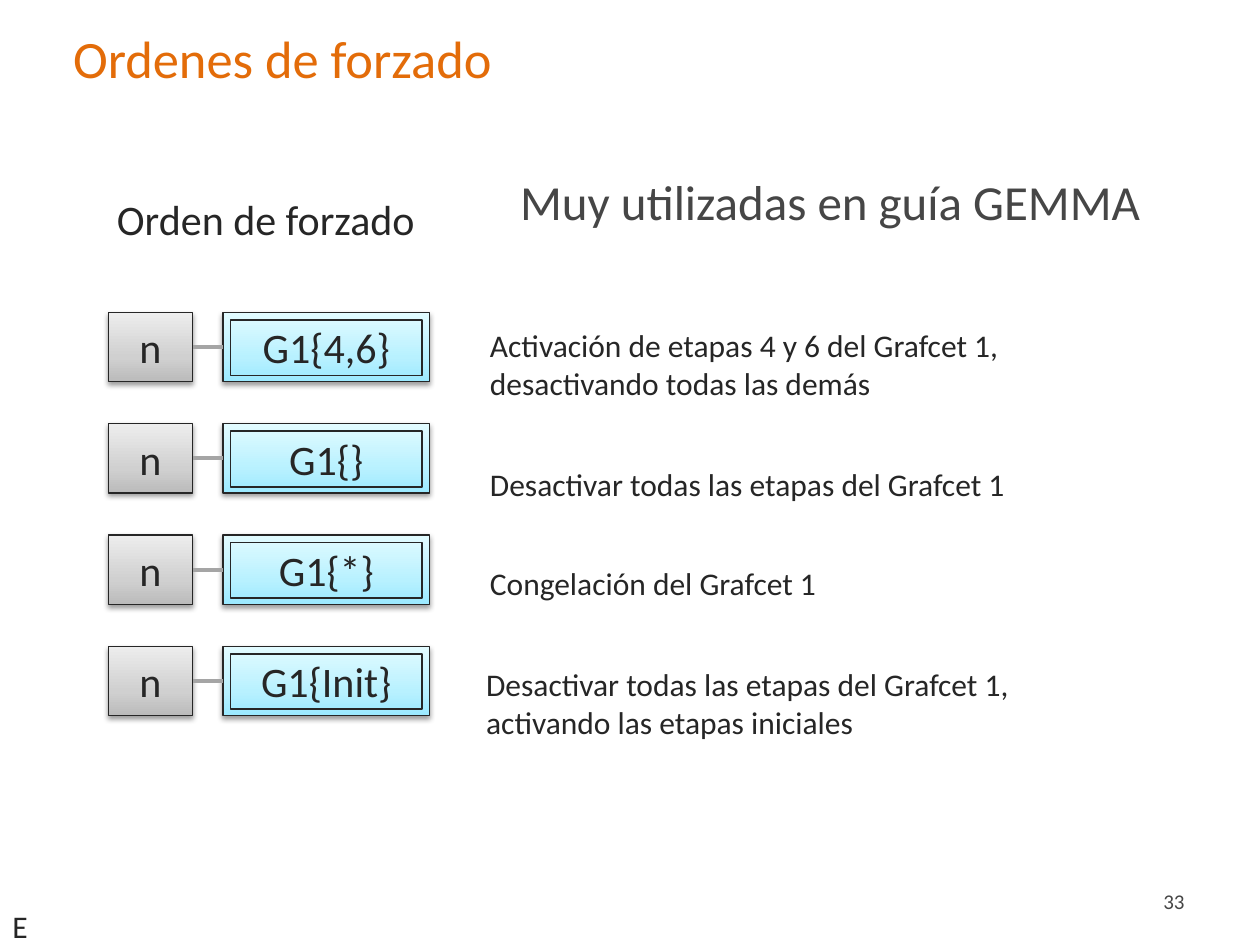
from copy import deepcopy

from lxml import etree
from pptx import Presentation
from pptx import util as u
from pptx.dml import color
from pptx.enum import shapes, text
from pptx.oxml import ns

INK = "262626"
GREY = "464646"
ORANGE = "E36C09"
STEP_STOPS = [(0, "BBBBBB"), (0.35, "D0D0D0"), (1, "EDEDED")]
ORDER_STOPS = [(0, "9BE9FF"), (0.35, "B8F1FF"), (1, "E2FBFF")]
LEFT, CENTER, RIGHT = text.PP_ALIGN.LEFT, text.PP_ALIGN.CENTER, text.PP_ALIGN.RIGHT
TOP, MIDDLE = text.MSO_ANCHOR.TOP, text.MSO_ANCHOR.MIDDLE


def rgb(value):
    """Turn a hex string into a colour."""
    return color.RGBColor.from_string(value)


class ForcingSlide:
    """Hold the style and the slide, and draw each kind of element."""

    font = "Calibri"

    def __init__(self, prs):
        """Add a title-only slide."""
        self.slide = prs.slides.add_slide(prs.slide_layouts[5])

    def set_text(self, sp, words, size, ink=INK, align=LEFT, anchor=TOP):
        """Put formatted text in a shape."""
        tf = sp.text_frame
        tf.text = words
        tf.word_wrap = True
        tf.vertical_anchor = anchor
        p = tf.paragraphs[0]
        p.alignment = align
        r = p.runs[0]
        r.font.name = self.font
        r.font.size = u.Pt(size)
        r.font.color.rgb = rgb(ink)

    def title(self, words, x, y, w, h):
        """Place and fill the title placeholder."""
        sp = self.slide.shapes.title
        sp.left, sp.top, sp.width, sp.height = map(u.Inches, (x, y, w, h))
        self.set_text(sp, words, 30, ORANGE, anchor=MIDDLE)

    def label(self, words, x, y, w, h, size=18, **style):
        """Add a text box."""
        sp = self.slide.shapes.add_textbox(*map(u.Inches, (x, y, w, h)))
        self.set_text(sp, words, size, **style)

    def frame(self, group, x, y, w, h, weight):
        """Add an unfilled, outlined rectangle to a group."""
        sp = group.shapes.add_shape(shapes.MSO_SHAPE.RECTANGLE, *map(u.Inches, (x, y, w, h)))
        sp.shadow.inherit = False
        sp.fill.background()
        sp.line.color.rgb = rgb(INK)
        sp.line.width = u.Pt(weight)
        return sp

    def box(self, group, words, x, y, w, h, stops):
        """Add a shaded rectangle with a soft shadow and centred text."""
        sp = self.frame(group, x, y, w, h, 0.75)
        sp.fill.gradient()
        sp.fill.gradient_angle = 90
        gs_list = sp._element.spPr.find(ns.qn("a:gradFill")).find(ns.qn("a:gsLst"))
        gs_list.append(deepcopy(gs_list[-1]))
        for stop, (position, value) in zip(sp.fill.gradient_stops, stops):
            stop.position = position
            stop.color.rgb = rgb(value)
        effects = sp._element.spPr.find(ns.qn("a:effectLst"))
        shadow = etree.SubElement(effects, ns.qn("a:outerShdw"), blurRad=str(u.Pt(3.1)),
                                  dist=str(u.Pt(1.6)), dir="5400000", rotWithShape="0")
        tint = etree.SubElement(shadow, ns.qn("a:srgbClr"), val="000000")
        etree.SubElement(tint, ns.qn("a:alpha"), val="38000")
        self.set_text(sp, words, 24, align=CENTER, anchor=MIDDLE)
        return sp

    def link(self, group, start, end):
        """Join the right side of one box to the left side of another."""
        line = group.shapes.add_connector(shapes.MSO_CONNECTOR.STRAIGHT, start.left + start.width,
                                          start.top + start.height // 2,
                                          end.left, end.top + end.height // 2)
        line.begin_connect(start, 3)
        line.end_connect(end, 1)
        line.line.color.rgb = rgb("A5A5A5")
        line.line.width = u.Pt(2.25)
        etree.SubElement(line._element.spPr, ns.qn("a:effectLst"))

    def order(self, words, y):
        """Draw a step joined to its double-framed forcing order."""
        group = self.slide.shapes.add_group_shape()
        step = self.box(group, "n", 0.86, y, 0.67, 0.55, STEP_STOPS)
        action = self.box(group, words, 1.77, y, 1.64, 0.55, ORDER_STOPS)
        self.frame(group, 1.83, y + 0.06, 1.52, 0.44, 1)
        self.link(group, step, action)


def main():
    """Build and save the slide."""
    prs = Presentation()
    prs.slide_width, prs.slide_height = u.Inches(10), u.Inches(7.5)
    s = ForcingSlide(prs)
    s.title("Ordenes de forzado", 0.48, 0.08, 9.19, 0.75)
    s.label("Muy utilizadas en guía GEMMA", 4.03, 1.31, 5.64, 5.25, 28, ink=GREY)
    s.label("33", 7.17, 6.95, 2.33, 0.4, 12, ink=GREY, align=RIGHT, anchor=MIDDLE)
    s.label("Orden de forzado", 0.83, 1.49, 2.81, 0.5, 24)
    orders = [
        ("G1{4,6}", "Activación de etapas 4 y 6 del Grafcet 1, desactivando todas las demás",
         3.79, 2.54, 4.82, 0.71),
        ("G1{}", "Desactivar todas las etapas del Grafcet 1", 3.79, 3.64, 4.82, 0.4),
        ("G1{*}", "Congelación del Grafcet 1", 3.79, 4.43, 3.13, 0.4),
        ("G1{Init}", "Desactivar todas las etapas del Grafcet 1, activando las etapas iniciales",
         3.76, 5.23, 4.85, 0.71),
    ]
    first, last = 2.48, 5.13
    pitch = (last - first) / (len(orders) - 1)
    for i, (code, meaning, *area) in enumerate(orders):
        s.order(code, first + i * pitch)
        s.label(meaning, *area)
    s.label("E", 0, 7.15, 0.32, 0.4)
    prs.save("out.pptx")


if __name__ == "__main__":
    main()
